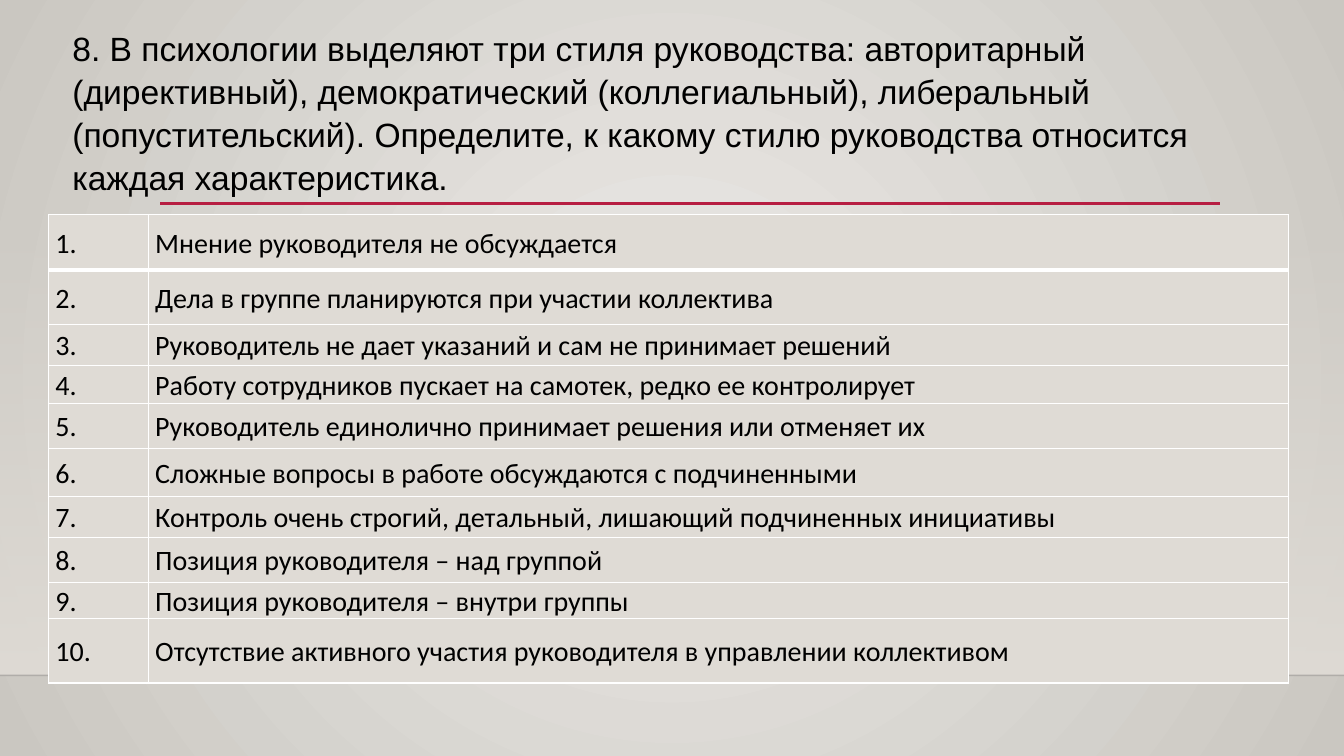
from pptx import Presentation
from pptx.dml.color import RGBColor as Rgb
from pptx.enum.shapes import MSO_CONNECTOR as Link, MSO_SHAPE as Form
from pptx.enum.text import MSO_ANCHOR as Anchor
from pptx.oxml import parse_xml
from pptx.oxml.ns import nsdecls, qn
from pptx.util import Inches, Pt

WIDE, HIGH = Inches(13.33), Inches(7.5)
SAND, WHITE, BLACK, RED = "DFDBD5", "FFFFFF", "000000", "B71E42"
TITLE = [
    "8. В психологии выделяют три стиля руководства: авторитарный",
    "(директивный), демократический (коллегиальный), либеральный",
    "(попустительский). Определите, к какому стилю руководства относится каждая характеристика.",
]
COLS = [7.43, 84.85]
ROWS = [
    (7.33, "Мнение руководителя не обсуждается"),
    (7.2, "Дела в группе планируются при участии коллектива"),
    (5.47, "Руководитель не дает указаний и сам не принимает решений"),
    (4.93, "Работу сотрудников пускает на самотек, редко ее контролирует"),
    (6, "Руководитель единолично принимает решения или отменяет их"),
    (6.4, "Сложные вопросы в работе обсуждаются с подчиненными"),
    (5.33, "Контроль очень строгий, детальный, лишающий подчиненных инициативы"),
    (6, "Позиция руководителя – над группой"),
    (4.27, "Позиция руководителя – внутри группы"),
    (8.53, "Отсутствие активного участия руководителя в управлении коллективом"),
]


def across(share):
    """Turn a percentage of the slide's width into a length."""
    return int(WIDE * share / 100)


def down(share):
    """Turn a percentage of the slide's height into a length."""
    return int(HIGH * share / 100)


def color(code):
    """Make a colour from a hex string."""
    return Rgb.from_string(code)


def wash(root, stops, course):
    """Replace the first empty fill under root with a gradient."""
    marks = "".join(
        f'<a:gs pos="{pos * 1000}"><a:srgbClr val="{code}">'
        f'<a:alpha val="{alpha * 1000}"/></a:srgbClr></a:gs>'
        for pos, code, alpha in stops)
    blank = next(root.iter(qn("a:noFill")))
    blank.getparent().replace(blank, parse_xml(
        f'<a:gradFill {nsdecls("a")} rotWithShape="1">'
        f'<a:gsLst>{marks}</a:gsLst>{course}</a:gradFill>'))


def add_glow(slide):
    """Paint the round gradient of the background."""
    slide.background.fill.background()
    wash(slide.element, [(0, "ECEAE7", 100), (100, "CAC7C1", 100)],
         '<a:path path="circle">'
         '<a:fillToRect l="50000" t="50000" r="50000" b="50000"/></a:path>')


def add_wall(slide, top, tall):
    """Add the full-width band that fades in downwards."""
    wall = slide.shapes.add_shape(Form.RECTANGLE, 0, down(top), WIDE, down(tall))
    wall.shadow.inherit = False
    wall.fill.background()
    wash(wall.element, [(0, SAND, 0), (100, SAND, 100)],
         '<a:lin ang="5400000" scaled="0"/>')
    wall.line.fill.background()


def add_rule(slide, left, right, top, code, size, alpha=100):
    """Add a level line."""
    rule = slide.shapes.add_connector(
        Link.STRAIGHT, across(left), down(top), across(right), down(top))
    rule.line.color.rgb = color(code)
    rule.line.width = Pt(size)
    props = rule.element.spPr
    props.append(parse_xml(f'<a:effectLst {nsdecls("a")}/>'))
    tint = next(props.iter(qn("a:srgbClr")))
    tint.append(parse_xml(f'<a:alpha {nsdecls("a")} val="{alpha * 1000}"/>'))


def write(frame, lines, face, size):
    """Write lines into one paragraph with breaks between them."""
    para = frame.paragraphs[0]
    para.line_spacing = 1.07
    for num, line in enumerate(lines):
        if num:
            para.add_line_break()
        run = para.add_run()
        run.text = line
        run.font.name = face
        run.font.size = Pt(size)
        run.font.color.rgb = color(BLACK)


def add_title(slide, left, top, wide, tall):
    """Add the task text."""
    box = slide.shapes.add_textbox(
        across(left), down(top), across(wide), down(tall))
    box.text_frame.word_wrap = True
    write(box.text_frame, TITLE, "Arial", 24)


def edge(cell, side, size):
    """Draw one white border of a cell."""
    cell._tc.get_or_add_tcPr().append(parse_xml(
        f'<a:ln{side} {nsdecls("a")} w="{Pt(size)}"><a:solidFill>'
        f'<a:srgbClr val="{WHITE}"/></a:solidFill></a:ln{side}>'))


def set_cell(cell, text, above, below):
    """Style one cell and write its text."""
    for side, size in zip("LRTB", (1, 1, above, below)):
        edge(cell, side, size)
    cell.fill.solid()
    cell.fill.fore_color.rgb = color(SAND)
    cell.vertical_anchor = Anchor.MIDDLE
    cell.margin_left = cell.margin_right = Inches(0.07)
    cell.margin_top = cell.margin_bottom = 0
    write(cell.text_frame, [text], "Calibri", 20)


def add_list(slide, left, top):
    """Add the numbered table of traits."""
    tall = sum(share for share, _ in ROWS)
    table = slide.shapes.add_table(
        len(ROWS), len(COLS), across(left), down(top),
        across(sum(COLS)), down(tall)).table
    for col, share in zip(table.columns, COLS):
        col.width = across(share)
    for num, (share, trait) in enumerate(ROWS):
        table.rows[num].height = down(share)
        above, below = 3 if num == 1 else 1, 3 if num == 0 else 1
        for cell, text in zip(table.rows[num].cells, (f"{num + 1}.", trait)):
            set_cell(cell, text, above, below)


def main():
    """Build and save the slide."""
    deck = Presentation()
    deck.slide_width, deck.slide_height = WIDE, HIGH
    slide = deck.slides.add_slide(deck.slide_layouts[6])
    add_glow(slide)
    add_wall(slide, 29.47, 59.87)
    add_rule(slide, 0, 100, 89.33, "000001", 1, 20)
    add_rule(slide, 11.93, 90.77, 26.93, RED, 2.5)
    add_title(slide, 4.65, 2.67, 91.15, 24.4)
    add_list(slide, 3.6, 28.4)
    deck.save("out.pptx")


if __name__ == "__main__":
    main()
